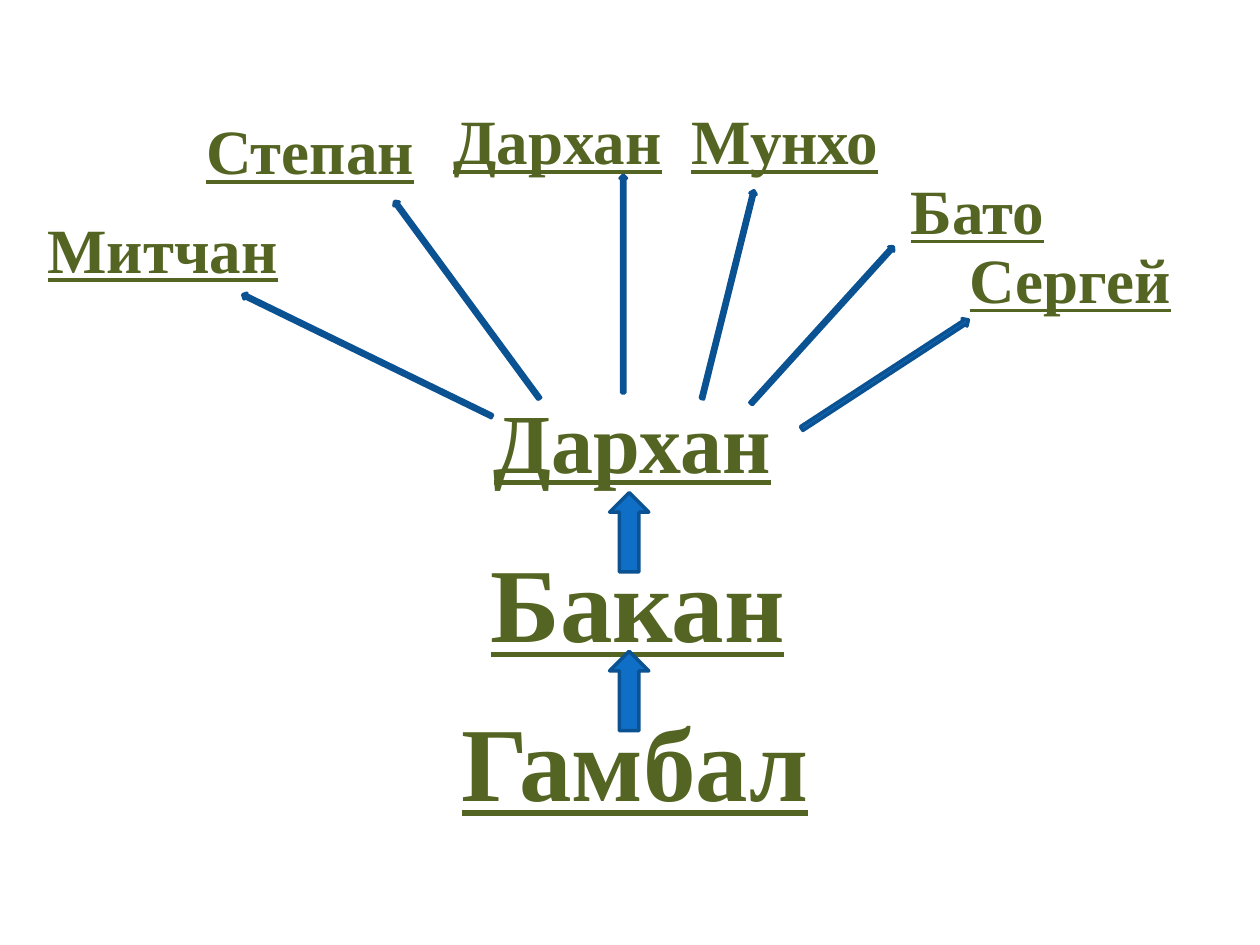
from pptx import Presentation
from pptx.dml.color import RGBColor
from pptx.enum.shapes import MSO_SHAPE
from pptx.enum.text import MSO_AUTO_SIZE, PP_ALIGN
from pptx.util import Cm, Pt

THEME = {
    "font": "Times New Roman",
    "text": RGBColor.from_string("546422"),
    "fill": RGBColor.from_string("0F6FC6"),
    "line": RGBColor.from_string("0B5292"),
    "root": 60,
    "father": 48,
    "son": 36,
}
HEIGHTS = {"root": 2.82, "father": 2.31, "son": 1.8}

ANCESTORS = [
    ("Гамбал", "root", 8.1, 13.92, 9.4, PP_ALIGN.CENTER),
    ("Бакан", "root", 8.51, 10.72, 8.69, PP_ALIGN.CENTER),
    ("Дархан", "father", 9.7, 7.72, 6.81, PP_ALIGN.LEFT),
]
SONS = [
    ("Митчан", 0.71, 4.11, 5.41),
    ("Степан", 3.91, 2.13, 5.41),
    ("Дархан", 8.89, 1.93, 5.21),
    ("Мунхо", 13.69, 1.93, 5.99),
    ("Бато", 18.11, 3.33, 3.3),
    ("Сергей", 19.3, 4.72, 4.7),
]
TRUNK_ARROWS = [
    (12.29, 13.13, 0.79, 1.6, 0),
    (12.29, 9.93, 0.79, 1.6, 0),
]
BRANCH_ARROWS = [
    (7.34, 4.37, 0.13, 5.59, 296),
    (9.35, 3.58, 0.13, 4.93, 323.7),
    (12.5, 3.53, 0.13, 4.39, 0),
    (14.61, 3.78, 0.13, 4.32, 14),
    (16.51, 4.42, 0.13, 4.27, 42.2),
    (17.75, 5.54, 0.18, 4.01, 56.9),
]


def add_name(s, name, level, left, top, width, align=PP_ALIGN.LEFT):
    sp = s.shapes.add_textbox(Cm(left), Cm(top), Cm(width), Cm(HEIGHTS[level]))
    tf = sp.text_frame
    tf.word_wrap = True
    tf.auto_size = MSO_AUTO_SIZE.SHAPE_TO_FIT_TEXT
    p = tf.paragraphs[0]
    p.alignment = align
    r = p.add_run()
    r.text = name
    r.font.name = THEME["font"]
    r.font.size = Pt(THEME[level])
    r.font.bold = True
    r.font.underline = True
    r.font.color.rgb = THEME["text"]


def add_arrow(s, left, top, width, height, rotation):
    sp = s.shapes.add_shape(MSO_SHAPE.UP_ARROW, Cm(left), Cm(top), Cm(width), Cm(height))
    sp.rotation = rotation
    sp.shadow.inherit = False
    sp.fill.solid()
    sp.fill.fore_color.rgb = THEME["fill"]
    sp.line.color.rgb = THEME["line"]
    sp.line.width = Pt(2)


def main():
    prs = Presentation()
    prs.slide_width, prs.slide_height = Cm(25.4), Cm(19.05)
    s = prs.slides.add_slide(prs.slide_layouts[6])
    for ancestor in ANCESTORS:
        add_name(s, *ancestor)
    for name, *place in SONS:
        add_name(s, name, "son", *place)
    for arrow in TRUNK_ARROWS + BRANCH_ARROWS:
        add_arrow(s, *arrow)
    prs.save("out.pptx")


if __name__ == "__main__":
    main()
